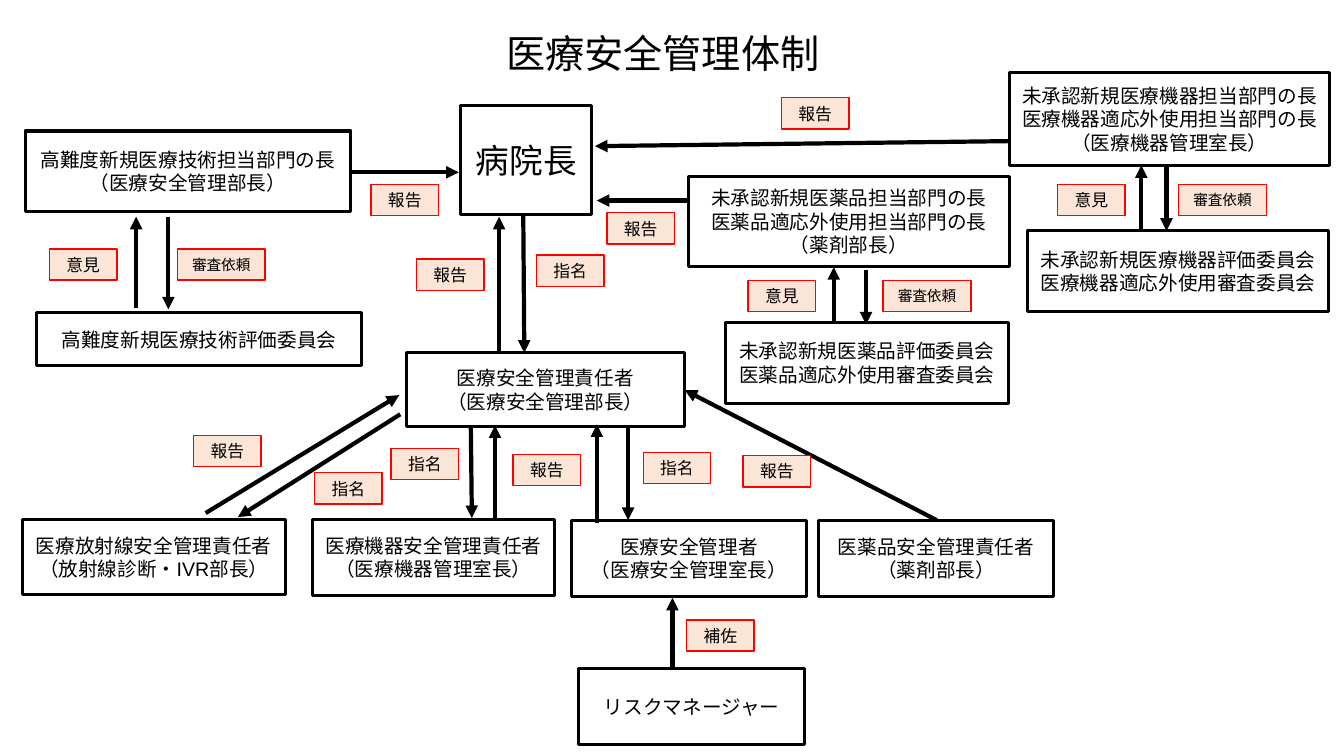
from lxml.etree import SubElement
from pptx import Presentation
from pptx.dml.color import RGBColor
from pptx.enum.shapes import MSO_CONNECTOR as Link, MSO_SHAPE as Shape
from pptx.enum.text import MSO_ANCHOR as Anchor, MSO_AUTO_SIZE as Fit, PP_ALIGN as Align
from pptx.oxml.ns import qn
from pptx.util import Inches, Pt

BLACK, WHITE, RED, PEACH = "000000", "FFFFFF", "FF0000", "FBE5D6"
TAG_H = 0.31


def color(code):
    return RGBColor.from_string(code)


def style(frame, size, align, font="Arial"):
    form = {"name": font, "size": Pt(size), "bold": False}
    for para in frame.paragraphs:
        para.alignment = align
        for key, value in form.items():
            setattr(para.font, key, value)
        para.font.color.rgb = color(BLACK)


def panel(slide, box, text, size=14, fill=WHITE, edge=BLACK, width=2.25):
    shape = slide.shapes.add_shape(Shape.RECTANGLE, *map(Inches, box))
    shape.shadow.inherit = False
    shape.fill.solid()
    shape.fill.fore_color.rgb = color(fill)
    shape.line.color.rgb = color(edge)
    shape.line.width = Pt(width)
    frame = shape.text_frame
    frame.word_wrap = True
    frame.vertical_anchor = Anchor.MIDDLE
    frame.text = text
    style(frame, size, Align.CENTER)


def tag(slide, x, y, text):
    wide, size = (0.87, 10.5) if len(text) > 2 else (0.67, 12)
    panel(slide, (x, y, wide, TAG_H), text, size, PEACH, RED, 1)


def arrow(slide, x1, y1, x2, y2):
    line = slide.shapes.add_connector(Link.STRAIGHT, *map(Inches, (x1, y1, x2, y2)))
    line.line.color.rgb = color(BLACK)
    line.line.width = Pt(3)
    SubElement(line.line._get_or_add_ln(), qn("a:tailEnd"), type="triangle")
    SubElement(line._element.spPr, qn("a:effectLst"))


def heading(slide, box, text):
    title = slide.shapes.title
    for key, value in zip(("left", "top", "width", "height"), box):
        setattr(title, key, Inches(value))
    frame = title.text_frame
    frame.text = text
    frame.auto_size = Fit.NONE
    frame.word_wrap = True
    frame.vertical_anchor = Anchor.TOP
    style(frame, 28, Align.LEFT, "Vollkorn")


def review(slide, box, office, board, place, up, down, tags):
    x, y, w, h = box
    dx, dy, bw, bh = place
    panel(slide, box, office)
    panel(slide, (x + dx, y + dy, bw, bh), board)
    for step, start, end in (up, down):
        arrow(slide, x + step, y + start, x + step, y + end)
    left, right, drop = tags
    tag(slide, x + left, y + drop, "意見")
    tag(slide, x + right, y + drop, "審査依頼")


def report(slide, start, end, spot):
    arrow(slide, *start, *end)
    tag(slide, *spot, "報告")


def command(slide, box, lead):
    x, y, w, h = box
    panel(slide, box, "病院長", 24)
    panel(slide, lead, "医療安全管理責任者\n（医療安全管理部長）")
    arrow(slide, x + 0.38, lead[1], x + 0.38, y + h + 0.02)
    arrow(slide, x + 0.62, y + h, x + 0.63, lead[1])
    tag(slide, x - 0.44, y + 1.52, "報告")
    tag(slide, x + 0.75, y + 1.48, "指名")


def duty(slide, box, text, links, tags):
    x, y, w, h = box
    panel(slide, box, text)
    for x1, y1, x2, y2 in links:
        arrow(slide, x + x1, y + y1, x + x2, y + y2)
    for dx, dy, word in tags:
        tag(slide, x + dx, y + dy, word)


def main():
    deck = Presentation()
    deck.slide_width, deck.slide_height = Inches(13.33), Inches(7.5)
    slide = deck.slides.add_slide(deck.slide_layouts[5])
    heading(slide, (4.92, 0.24, 3.46, 0.57), "医療安全管理体制")
    command(slide, (4.57, 1.05, 1.3, 1.08), (4.03, 3.5, 2.76, 0.73))

    review(slide, (0.25, 1.3, 3.23, 0.8),
           "高難度新規医療技術担当部門の長\n（医療安全管理部長）",
           "高難度新規医療技術評価委員会", (0.11, 1.8, 3.23, 0.53),
           (1.1, 1.76, 0.85), (1.42, 0.85, 1.77), (0.24, 1.51, 1.17))
    review(slide, (6.83, 1.75, 3.18, 0.89),
           "未承認新規医薬品担当部門の長\n医薬品適応外使用担当部門の長\n（薬剤部長）",
           "未承認新規医薬品評価委員会\n医薬品適応外使用審査委員会", (0.37, 1.45, 2.8, 0.8),
           (1.44, 1.45, 0.9), (1.76, 0.93, 1.47), (0.59, 1.93, 1.03))
    review(slide, (10.01, 0.72, 3.18, 0.92),
           "未承認新規医療機器担当部門の長\n医療機器適応外使用担当部門の長\n（医療機器管理室長）",
           "未承認新規医療機器評価委員会\n医療機器適応外使用審査委員会", (0.18, 1.57, 2.99, 0.8),
           (1.31, 1.57, 0.92), (1.56, 0.92, 1.57), (0.48, 1.68, 1.11))

    report(slide, (3.47, 1.71), (4.55, 1.71), (3.68, 1.83))
    report(slide, (6.81, 1.99), (5.92, 1.99), (6.02, 2.11))
    report(slide, (10.01, 1.4), (5.9, 1.45), (7.75, 0.97))

    duty(slide, (0.22, 5.15, 2.61, 0.75), "医療放射線安全管理責任者\n（放射線診断・IVR部長）",
         [(1.82, -0.06, 3.74, -1.23), (3.75, -1.04, 2.14, -0.02)],
         [(1.7, -0.83, "報告"), (2.9, -0.46, "指名")])
    duty(slide, (3.1, 5.15, 2.4, 0.76), "医療機器安全管理責任者\n（医療機器管理室長）",
         [(1.81, 0.01, 1.81, -0.93), (1.57, -0.91, 1.58, -0.01)],
         [(1.99, -0.64, "報告"), (0.78, -0.7, "指名")])
    duty(slide, (5.67, 5.16, 2.33, 0.76), "医療安全管理者\n（医療安全管理室長）",
         [(0.25, 0.03, 0.25, -0.95), (0.56, -0.94, 0.56, 0)],
         [(0.71, -0.67, "指名")])
    duty(slide, (8.12, 5.16, 2.33, 0.76), "医薬品安全管理責任者\n（薬剤部長）",
         [(1.17, 0, -1.33, -1.29)], [(-0.75, -0.64, "報告")])
    duty(slide, (5.74, 6.63, 2.24, 0.76), "リスクマネージャー",
         [(0.93, 0.01, 0.93, -0.7)], [(1.07, -0.48, "補佐")])
    deck.save("out.pptx")


if __name__ == "__main__":
    main()
